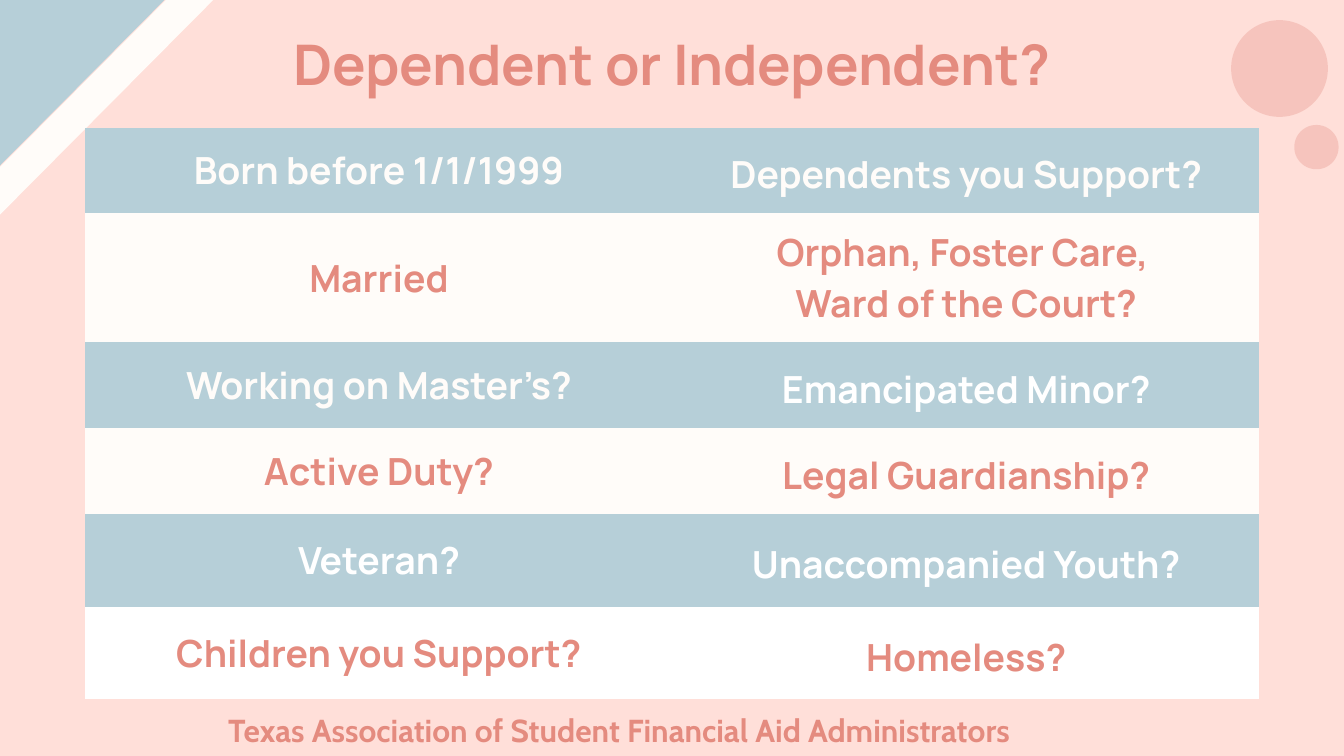
from pptx import Presentation
from pptx.dml.color import RGBColor
from pptx.enum.shapes import MSO_SHAPE as Preset
from pptx.enum.text import MSO_ANCHOR as Anchor, PP_ALIGN as Align
from pptx.oxml import parse_xml
from pptx.oxml.ns import nsdecls
from pptx.util import Inches, Pt

COLORS = {"background": "FFDFD9", "blue": "B6CFD8", "cream": "FFFCF9",
          "white": "FFFFFF", "coral": "E48B7F"}
TITLE = "Dependent or Independent?"
FOOTER = "Texas Association of Student Financial Aid Administrators"

# Left text, right text, row height, fill, left colour, right colour
ROWS = [
    ("Born before 1/1/1999", "Dependents you Support?", 0.56, "blue", "cream", "cream"),
    ("Married", "Orphan, Foster Care, \nWard of the Court?", 0.52, "cream", "coral", "coral"),
    ("Working on Master’s?", "Emancipated Minor?", 0.58, "blue", "cream", "white"),
    ("Active Duty?", "Legal Guardianship?", 0.62, "cream", "coral", "coral"),
    ("Veteran?", "Unaccompanied Youth?", 0.69, "blue", "white", "white"),
    ("Children you Support?", "Homeless?", 0.69, "white", "coral", "coral"),
]
COLUMN_WIDTHS = (4.38, 4.36)
SIDE_MARGINS = (0.1, 0.25)

# Preset, left, top, width, height, rotation, colour, opacity in percent
DECORATIONS = [
    (Preset.RECTANGLE, 0.56, -0.95, 0.25, 3.36, 224.8, "cream", 100),
    (Preset.RECTANGLE, -0.35, -1.43, 1.1, 3.36, 224.8, "blue", 100),
    (Preset.OVAL, 9.16, 0.15, 0.72, 0.72, 68.8, "coral", 31),
    (Preset.OVAL, 9.63, 0.93, 0.33, 0.33, 68.8, "coral", 31),
]


def rgb(name):
    return RGBColor.from_string(COLORS[name])


def set_font(paragraph, size, color, name="Manrope"):
    font = paragraph.font
    font.name, font.size, font.bold = name, Pt(size), True
    font.color.rgb = rgb(color)


def set_fill(fill, color, opacity=100):
    fill.solid()
    fill.fore_color.rgb = rgb(color)
    if opacity < 100:
        color_element = fill._xPr.find(".//{*}srgbClr")
        color_element.append(parse_xml(
            f'<a:alpha {nsdecls("a")} val="{opacity * 1000}"/>'))


def hide_borders(cell):
    properties = cell._tc.get_or_add_tcPr()
    for position, side in enumerate(("lnL", "lnR", "lnT", "lnB")):
        properties.insert(position, parse_xml(
            f'<a:{side} {nsdecls("a")} w="0"><a:noFill/></a:{side}>'))


def fill_cell(cell, text, fill, color, side_margin, spaced):
    set_fill(cell.fill, fill)
    hide_borders(cell)
    cell.vertical_anchor = Anchor.MIDDLE
    cell.margin_left = cell.margin_right = Inches(side_margin)
    cell.margin_top = cell.margin_bottom = Inches(0.1)
    cell.text = text
    for paragraph in cell.text_frame.paragraphs:
        paragraph.alignment = Align.CENTER
        set_font(paragraph, 20, color)
        if spaced:
            paragraph.line_spacing = 1.15
            paragraph.space_after = Pt(12)


presentation = Presentation()
presentation.slide_width = Inches(10)
presentation.slide_height = presentation.slide_width * 9 // 16
slide = presentation.slides.add_slide(presentation.slide_layouts[5])
set_fill(slide.background.fill, "background")

# Corner bands and circles
for preset, left, top, width, height, rotation, color, opacity in DECORATIONS:
    shape = slide.shapes.add_shape(preset, *map(Inches, (left, top, width, height)))
    shape.rotation = rotation
    shape.shadow.inherit = False
    set_fill(shape.fill, color, opacity)
    shape.line.fill.background()

# Title
title = slide.shapes.title
title.left, title.top, title.width, title.height = map(Inches, (0.78, 0.12, 8.44, 0.63))
frame = title.text_frame
frame.text = TITLE
frame.vertical_anchor = Anchor.TOP
frame.margin_top, frame.margin_bottom = Inches(0.1), Inches(0)
frame.paragraphs[0].alignment = Align.CENTER
set_font(frame.paragraphs[0], 30, "coral")

# Table of questions
table = slide.shapes.add_table(
    len(ROWS), len(COLUMN_WIDTHS), Inches(0.63), Inches(0.95),
    Inches(sum(COLUMN_WIDTHS)), Inches(sum(row[2] for row in ROWS))).table
for column, width in zip(table.columns, COLUMN_WIDTHS):
    column.width = Inches(width)
table.first_row = table.horz_banding = False
for index, (left_text, right_text, height, fill, *colors) in enumerate(ROWS):
    table.rows[index].height = Inches(height)
    for column, text in enumerate((left_text, right_text)):
        spaced = column == 1 and "\n" not in text
        fill_cell(table.cell(index, column), text, fill, colors[column],
                  SIDE_MARGINS[column], spaced)

# Footer
footer = slide.shapes.add_textbox(Inches(1.6), Inches(5.24), Inches(6.8), Inches(0.39))
footer.text_frame.word_wrap = True
footer.text_frame.text = FOOTER
set_font(footer.text_frame.paragraphs[0], 17, "coral", "Cabin")

presentation.save("out.pptx")
